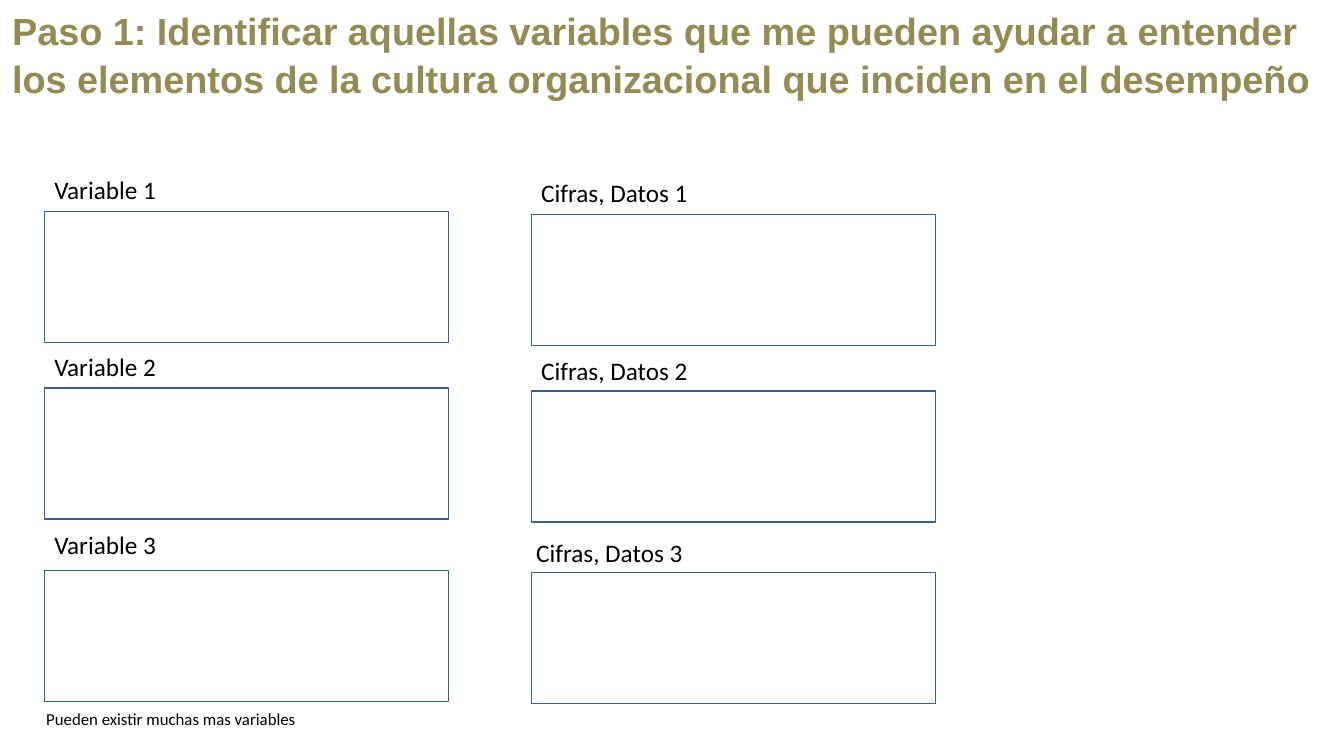
from pptx import Presentation
from pptx.dml.color import RGBColor as Rgb
from pptx.enum.shapes import MSO_SHAPE as Shape
from pptx.enum.text import MSO_ANCHOR as Anchor, MSO_AUTO_SIZE as Fit, PP_ALIGN as Align
from pptx.util import Inches, Pt

OLIVE = Rgb(0x94, 0x8A, 0x54)
BLUE = Rgb(0x3A, 0x5F, 0x8C)
WHITE = Rgb(0xFF, 0xFF, 0xFF)
BLACK = Rgb(0, 0, 0)

TITLE = ("Paso 1: Identificar aquellas variables que me pueden ayudar a entender "
         "los elementos de la cultura organizacional que inciden en el desempeño")
COLUMNS = [
    ("Variable", 1.22, 0.44, [(0.44, 1.68, 2.1), (0.44, 3.44, 3.85), (0.44, 5.2, 5.66)]),
    ("Cifras, Datos", 1.67, 5.27, [(5.27, 1.71, 2.13), (5.27, 3.48, 3.88), (5.22, 5.28, 5.68)]),
]


def style(para, name, size, color, bold=False):
    font = para.font
    font.name, font.size, font.bold = name, Pt(size), bold
    font.color.rgb = color


def add_title(slide, left, top, width, height):
    title = slide.shapes.title
    title.left, title.top = Inches(left), Inches(top)
    title.width, title.height = Inches(width), Inches(height)
    frame = title.text_frame
    frame.text = TITLE
    frame.word_wrap = True
    frame.auto_size = Fit.NONE
    frame.vertical_anchor = Anchor.TOP
    para = frame.paragraphs[0]
    para.alignment = Align.LEFT
    para.line_spacing = 1.06
    style(para, "Arial", 27, OLIVE, True)


def add_label(slide, text, left, top, width, height, size):
    label = slide.shapes.add_textbox(Inches(left), Inches(top), Inches(width), Inches(height))
    frame = label.text_frame
    frame.text = text
    frame.word_wrap = False
    frame.auto_size = Fit.SHAPE_TO_FIT_TEXT
    style(frame.paragraphs[0], "Calibri", size, BLACK)


def add_box(slide, left, top, width, height):
    box = slide.shapes.add_shape(
        Shape.RECTANGLE, Inches(left), Inches(top), Inches(width), Inches(height))
    box.shadow.inherit = False
    box.fill.solid()
    box.fill.fore_color.rgb = WHITE
    box.line.color.rgb = BLUE
    box.line.width = Pt(1)


def add_column(slide, name, width, left, rows):
    for num, (edge, head, top) in enumerate(rows, 1):
        add_box(slide, left, top, 4.01, 1.3)
        add_label(slide, f"{name} {num}", edge, head, width, 0.4, 18)


def main():
    deck = Presentation()
    deck.slide_width, deck.slide_height = Inches(13.33), Inches(7.5)
    slide = deck.slides.add_slide(deck.slide_layouts[5])
    add_title(slide, 0.02, 0, 13.32, 1.01)
    for column in COLUMNS:
        add_column(slide, *column)
    add_label(slide, "Pueden existir muchas mas variables", 0.36, 6.98, 2.71, 0.3, 12)
    deck.save("out.pptx")


if __name__ == "__main__":
    main()
